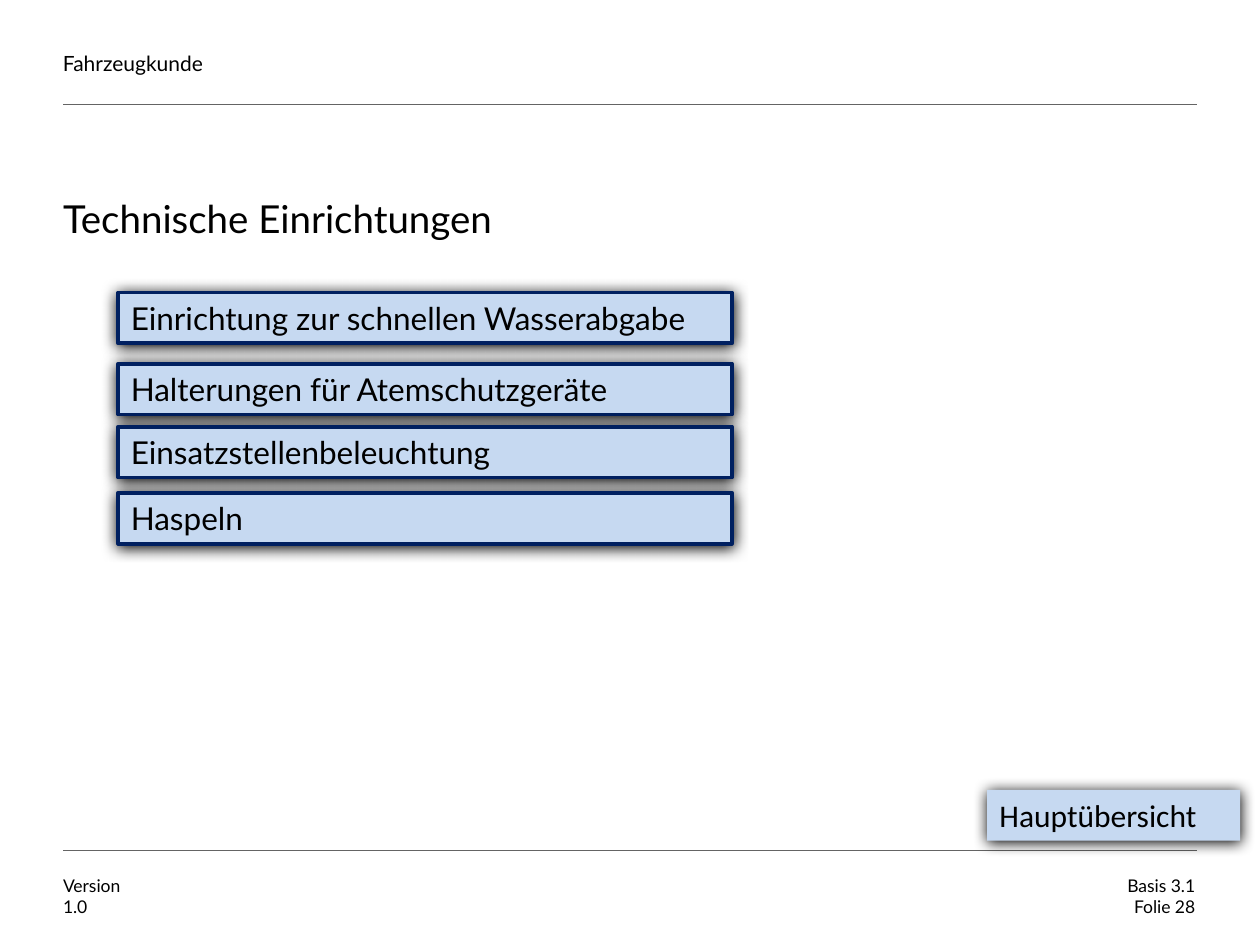
from dataclasses import dataclass

from lxml.etree import SubElement
from pptx import Presentation
from pptx.dml.color import RGBColor
from pptx.enum.shapes import MSO_CONNECTOR, MSO_SHAPE
from pptx.enum.text import MSO_ANCHOR, MSO_AUTO_SIZE, PP_ALIGN
from pptx.oxml.ns import qn
from pptx.shapes.autoshape import Shape
from pptx.slide import Slide
from pptx.text.text import TextFrame
from pptx.util import Pt

BLACK, GREY, NAVY, PALE_BLUE = "000000", "646464", "002060", "C6D9F1"
MARGIN, RIGHT_EDGE = 36, 684
BUTTON_HEIGHT = 29.08


@dataclass
class Button:
    text: str
    top: float
    left: float = 67.7
    width: float = 350.6
    font: str = "Lato"
    outlined: bool = True


@dataclass
class Label:
    text: str
    left: float
    top: float
    width: float
    height: float
    size: float = 10
    align: PP_ALIGN = PP_ALIGN.LEFT


BUTTONS = [
    Button("Einrichtung zur schnellen Wasserabgabe", 167.2),
    Button("Halterungen für Atemschutzgeräte", 207.8),
    Button("Einsatzstellenbeleuchtung", 243.8),
    Button("Haspeln", 281.6),
    Button("Hauptübersicht", 451.4, left=564, width=144.7,
           font="Calibri", outlined=False),
]
LABELS = [
    Label("Fahrzeugkunde", MARGIN, 24, 438, 24, size=12),
    Label("Version\n1.0", MARGIN, 496, 40, 32),
    Label("Basis 3.1\nFolie 28", 581, 496, 102, 32, align=PP_ALIGN.RIGHT),
]
RULES = [59.8, 486]


def color(value: str) -> RGBColor:
    return RGBColor.from_string(value)


def write_text(frame: TextFrame, text: str, *, size: float, font: str = "Lato",
               align: PP_ALIGN = PP_ALIGN.LEFT, anchor: MSO_ANCHOR = MSO_ANCHOR.TOP,
               inset: bool = False, spacing: float | None = None) -> None:
    frame.word_wrap = True
    frame.vertical_anchor = anchor
    if not inset:
        frame.margin_left = frame.margin_right = Pt(0)
        frame.margin_top = frame.margin_bottom = Pt(0)
    frame.text = text
    for para in frame.paragraphs:
        para.alignment = align
        if spacing:
            para.line_spacing = Pt(spacing)
        para.font.size = Pt(size)
        para.font.name = font
        para.font.color.rgb = color(BLACK)


def add_rule(page: Slide, top: float) -> None:
    rule = page.shapes.add_connector(
        MSO_CONNECTOR.STRAIGHT, Pt(MARGIN), Pt(top), Pt(RIGHT_EDGE), Pt(top))
    rule.line.color.rgb = color(GREY)
    rule.line.width = Pt(0.25)
    SubElement(rule.line._get_or_add_ln().getparent(), qn("a:effectLst"))


def add_label(page: Slide, label: Label) -> None:
    box = page.shapes.add_textbox(
        Pt(label.left), Pt(label.top), Pt(label.width), Pt(label.height))
    write_text(box.text_frame, label.text, size=label.size, align=label.align,
               anchor=MSO_ANCHOR.MIDDLE)


def add_shadow(box: Shape) -> None:
    box.shadow.inherit = False
    effects = box._element.spPr.find(qn("a:effectLst"))
    shadow = SubElement(effects, qn("a:outerShdw"), blurRad=str(Pt(8.5)),
                        dist=str(Pt(1)), dir=str(90 * 60000), algn="t", rotWithShape="0")
    SubElement(shadow, qn("a:srgbClr"), val=BLACK)


def add_button(page: Slide, button: Button) -> None:
    box = page.shapes.add_shape(
        MSO_SHAPE.RECTANGLE, Pt(button.left), Pt(button.top),
        Pt(button.width), Pt(BUTTON_HEIGHT))
    box.fill.solid()
    box.fill.fore_color.rgb = color(PALE_BLUE)
    if button.outlined:
        box.line.color.rgb = color(NAVY)
        box.line.width = Pt(2.25)
    else:
        box.line.fill.background()
    add_shadow(box)
    write_text(box.text_frame, button.text, size=18, font=button.font, inset=True)
    box.text_frame.auto_size = MSO_AUTO_SIZE.SHAPE_TO_FIT_TEXT


def set_title(page: Slide, text: str) -> None:
    title = page.shapes.title
    title.left, title.top = Pt(MARGIN), Pt(114)
    title.width, title.height = Pt(516), Pt(48)
    write_text(title.text_frame, text, size=22, spacing=24)
    title.text_frame.auto_size = MSO_AUTO_SIZE.NONE


def main() -> None:
    deck = Presentation()
    deck.slide_width, deck.slide_height = Pt(720), Pt(540)
    page = deck.slides.add_slide(deck.slide_layouts.get_by_name("Title Only"))
    for top in RULES:
        add_rule(page, top)
    for label in LABELS:
        add_label(page, label)
    set_title(page, "Technische Einrichtungen")
    for button in BUTTONS:
        add_button(page, button)
    deck.save("out.pptx")


if __name__ == "__main__":
    main()
